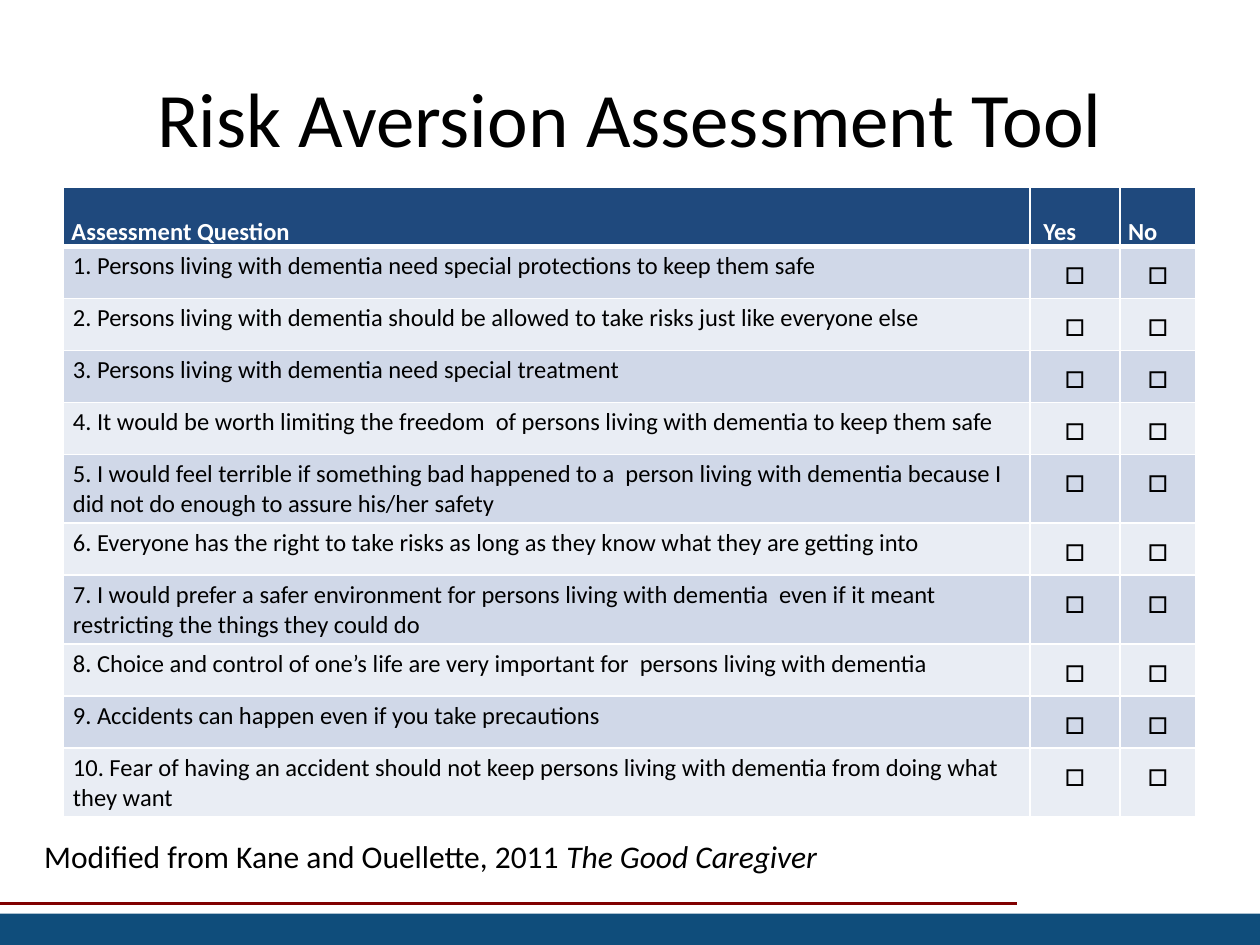
from lxml.etree import SubElement
from pptx import Presentation
from pptx.dml.color import RGBColor
from pptx.enum.shapes import MSO_CONNECTOR, MSO_SHAPE
from pptx.enum.text import MSO_ANCHOR, PP_ALIGN
from pptx.oxml.ns import qn
from pptx.util import Cm, Pt

QUESTIONS = [
    "1. Persons living with dementia need special protections to keep them safe",
    "2. Persons living with dementia should be allowed to take risks just like everyone else",
    "3. Persons living with dementia need special treatment",
    "4. It would be worth limiting the freedom  of persons living with dementia to keep them safe",
    "5. I would feel terrible if something bad happened to a  person living with dementia because I "
    "did not do enough to assure his/her safety",
    "6. Everyone has the right to take risks as long as they know what they are getting into",
    "7. I would prefer a safer environment for persons living with dementia  even if it meant "
    "restricting the things they could do",
    "8. Choice and control of one’s life are very important for  persons living with dementia",
    "9. Accidents can happen even if you take precautions",
    "10. Fear of having an accident should not keep persons living with dementia from doing what "
    "they want",
]
HEADINGS = ["Assessment Question", " Yes", "No"]
COLUMN_WIDTHS = [19.48, 1.82, 1.53]
HEADER_HEIGHT, SHORT_ROW, LONG_ROW = 1.14, 0.76, 1.35
LONG_QUESTIONS = (5, 7)
NAVY, BAND_DARK, BAND_LIGHT = "1F497D", "D0D8E8", "E9EDF4"


def color(value):
    """Turn a hex string into a colour."""
    return RGBColor.from_string(value)


def write(paragraph, text, size=14, ink="000000", bold=False, italic=False, align=PP_ALIGN.LEFT):
    """Append a formatted run to a paragraph."""
    paragraph.alignment = align
    run = paragraph.add_run()
    run.text = text
    run.font.name = "Calibri"
    run.font.size = Pt(size)
    run.font.bold = bold
    run.font.italic = italic
    run.font.color.rgb = color(ink)


def add_text_area(slide, left, top, width, height, anchor=MSO_ANCHOR.TOP):
    """Add a wrapping text box and return its first paragraph."""
    frame = slide.shapes.add_textbox(Cm(left), Cm(top), Cm(width), Cm(height)).text_frame
    frame.word_wrap = True
    frame.vertical_anchor = anchor
    return frame.paragraphs[0]


def add_footer(slide):
    """Draw the red rule and the blue band at the foot of the slide."""
    rule = slide.shapes.add_connector(MSO_CONNECTOR.STRAIGHT, Cm(0), Cm(18.21), Cm(20.5), Cm(18.21))
    rule.line.color.rgb = color("800000")
    rule.line.width = Pt(1.5)
    SubElement(rule._element.spPr, qn("a:effectLst"))
    band = slide.shapes.add_shape(MSO_SHAPE.RECTANGLE, Cm(0), Cm(18.42), Cm(25.4), Cm(0.63))
    band.shadow.inherit = False
    band.fill.solid()
    band.fill.fore_color.rgb = color("0F4D7B")
    band.line.fill.background()


def style_cell(cell, fill, side_margin, end_margin, bottom_border=1):
    """Set the margins, white borders and fill of a cell."""
    cell.margin_left = cell.margin_right = Cm(side_margin)
    cell.margin_top = cell.margin_bottom = Cm(end_margin)
    properties = cell._tc.get_or_add_tcPr()
    for side, width in (("L", 1), ("R", 1), ("T", 1), ("B", bottom_border)):
        border = SubElement(properties, qn(f"a:ln{side}"), w=str(Pt(width)))
        SubElement(SubElement(border, qn("a:solidFill")), qn("a:srgbClr"), val="FFFFFF")
    cell.fill.solid()
    cell.fill.fore_color.rgb = color(fill)


def fill_header(table):
    """Fill the heading row."""
    table.rows[0].height = Cm(HEADER_HEIGHT)
    for cell, heading in zip(table.rows[0].cells, HEADINGS):
        style_cell(cell, NAVY, 0.16, 0, bottom_border=3)
        paragraph = cell.text_frame.paragraphs[0]
        paragraph.line_spacing = 2.0
        paragraph.space_after = Pt(1)
        write(paragraph, heading, ink="FFFFFF", bold=True)


def fill_question(table, number, question):
    """Fill one question row with its text and two check boxes."""
    row = table.rows[number]
    row.height = Cm(LONG_ROW if number in LONG_QUESTIONS else SHORT_ROW)
    question_cell, *answer_cells = row.cells
    for cell in row.cells:
        style_cell(cell, BAND_DARK if number % 2 else BAND_LIGHT, 0.19, 0.1)
    write(question_cell.text_frame.paragraphs[0], question)
    for cell in answer_cells:
        write(cell.text_frame.paragraphs[0], "□", size=20, align=PP_ALIGN.CENTER)


def add_assessment(slide):
    """Add the table of assessment questions."""
    height = HEADER_HEIGHT + sum(
        LONG_ROW if number in LONG_QUESTIONS else SHORT_ROW
        for number in range(1, len(QUESTIONS) + 1)
    )
    table = slide.shapes.add_table(
        len(QUESTIONS) + 1, len(HEADINGS),
        Cm(1.28), Cm(3.78), Cm(sum(COLUMN_WIDTHS)), Cm(height),
    ).table
    for column, width in zip(table.columns, COLUMN_WIDTHS):
        column.width = Cm(width)
    fill_header(table)
    for number, question in enumerate(QUESTIONS, 1):
        fill_question(table, number, question)


def main():
    """Build and save the slide."""
    presentation = Presentation()
    presentation.slide_width, presentation.slide_height = Cm(25.4), Cm(19.05)
    slide = presentation.slides.add_slide(presentation.slide_layouts[6])
    add_footer(slide)
    title = add_text_area(slide, 1.27, 0.76, 22.86, 3.18, MSO_ANCHOR.MIDDLE)
    write(title, "Risk Aversion Assessment Tool", size=44, align=PP_ALIGN.CENTER)
    add_assessment(slide)
    credit = add_text_area(slide, 0.64, 16.75, 22.86, 1.07)
    write(credit, "Modified from Kane and Ouellette, 2011 ", size=18)
    write(credit, "The Good Caregiver", size=18, italic=True)
    presentation.save("out.pptx")


if __name__ == "__main__":
    main()
